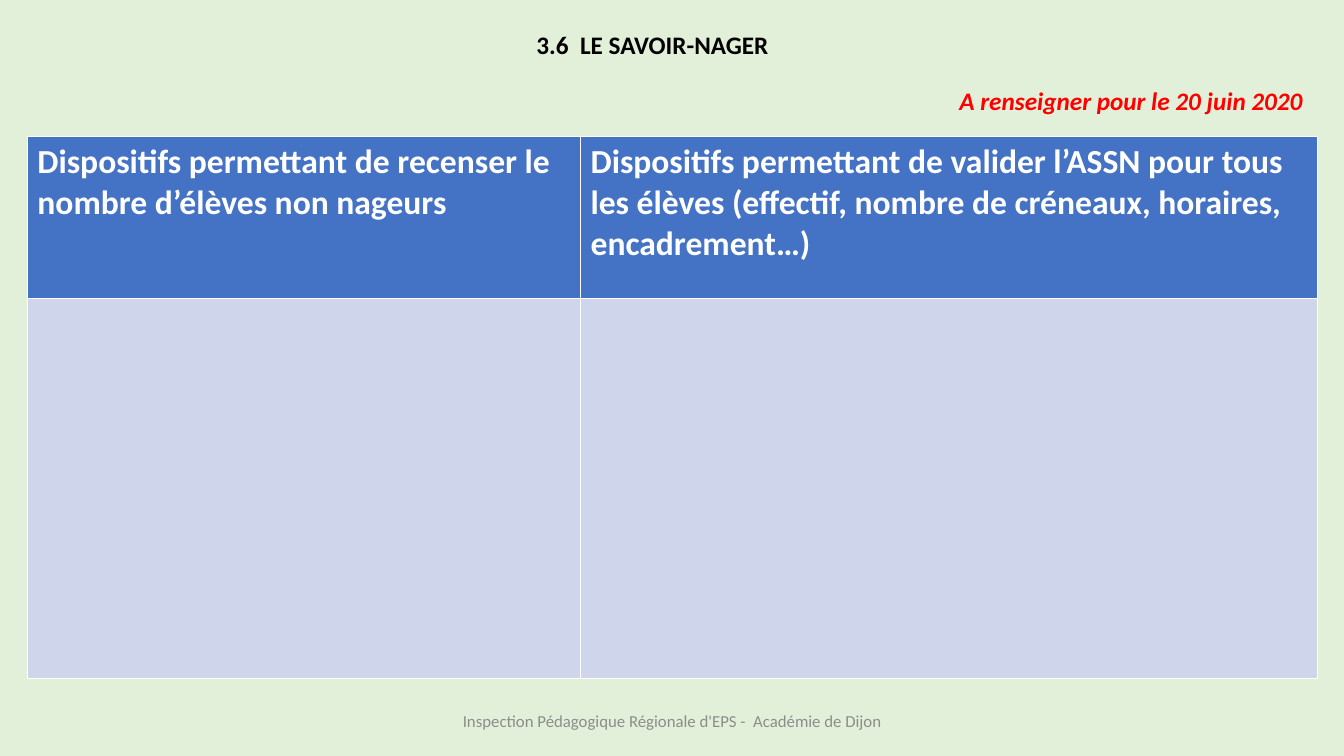
from pptx import Presentation
from pptx.dml.color import RGBColor
from pptx.enum.text import MSO_ANCHOR as Anchor, MSO_AUTO_SIZE as AutoSize, PP_ALIGN as Align
from pptx.util import Cm, Pt

FONT = "Calibri"
PALE_GREEN = RGBColor(0xE2, 0xF0, 0xD9)
BLUE = RGBColor(0x44, 0x72, 0xC4)
LAVENDER = RGBColor(0xCF, 0xD5, 0xEA)
WHITE = RGBColor(0xFF, 0xFF, 0xFF)
BLACK = RGBColor(0x00, 0x00, 0x00)
RED = RGBColor(0xFF, 0x00, 0x00)
GREY = RGBColor(0x8C, 0x8C, 0x8C)

TITLE = "3.6  LE SAVOIR-NAGER"
DEADLINE = "A renseigner pour le 20 juin 2020"
FOOTER = "Inspection Pédagogique Régionale d'EPS -  Académie de Dijon"
HEADINGS = [
    "Dispositifs permettant de recenser le nombre d’élèves non nageurs",
    "Dispositifs permettant de valider l’ASSN pour tous les élèves "
    "(effectif, nombre de créneaux, horaires, encadrement…)",
]
COLUMN_WIDTHS = [13.94, 18.57]
ROW_HEIGHTS = [4.09, 9.58]
TABLE_LEFT, TABLE_TOP = 0.69, 3.43
LINE_HEIGHT = 1.02


def write(paragraph, words, size, color, bold=False, italic=False):
    run = paragraph.add_run()
    run.text = words
    font = run.font
    font.name, font.size, font.bold, font.italic = FONT, Pt(size), bold, italic
    font.color.rgb = color


def add_line(slide, words, left, top, width, size, color, align,
             bold=False, italic=False, wrap=True, fit=AutoSize.SHAPE_TO_FIT_TEXT,
             anchor=Anchor.TOP):
    frame = slide.shapes.add_textbox(Cm(left), Cm(top), Cm(width), Cm(LINE_HEIGHT)).text_frame
    frame.word_wrap, frame.auto_size, frame.vertical_anchor = wrap, fit, anchor
    paragraph = frame.paragraphs[0]
    paragraph.alignment = align
    write(paragraph, words, size, color, bold, italic)


def add_survey(slide):
    survey = slide.shapes.add_table(
        len(ROW_HEIGHTS), len(COLUMN_WIDTHS), Cm(TABLE_LEFT), Cm(TABLE_TOP),
        Cm(sum(COLUMN_WIDTHS)), Cm(sum(ROW_HEIGHTS))).table
    for row, height in zip(survey.rows, ROW_HEIGHTS):
        row.height = Cm(height)
    for index, (heading, width) in enumerate(zip(HEADINGS, COLUMN_WIDTHS)):
        survey.columns[index].width = Cm(width)
        for row, color in enumerate((BLUE, LAVENDER)):
            fill = survey.cell(row, index).fill
            fill.solid()
            fill.fore_color.rgb = color
        write(survey.cell(0, index).text_frame.paragraphs[0], heading, 24, WHITE, bold=True)


def main():
    deck = Presentation()
    deck.slide_width, deck.slide_height = Cm(33.87), Cm(19.05)
    slide = deck.slides.add_slide(deck.slide_layouts[6])
    backdrop = slide.background.fill
    backdrop.solid()
    backdrop.fore_color.rgb = PALE_GREEN

    add_line(slide, FOOTER, 11.23, 17.65, 11.43, 12, GREY, Align.CENTER,
             fit=AutoSize.NONE, anchor=Anchor.MIDDLE)
    add_line(slide, TITLE, 9.93, 0.61, 13.03, 18, BLACK, Align.CENTER, bold=True)
    add_survey(slide)
    add_line(slide, DEADLINE, 23.93, 2.03, 9.27, 18, RED, Align.LEFT,
             bold=True, italic=True, wrap=False)
    deck.save("out.pptx")


if __name__ == "__main__":
    main()
